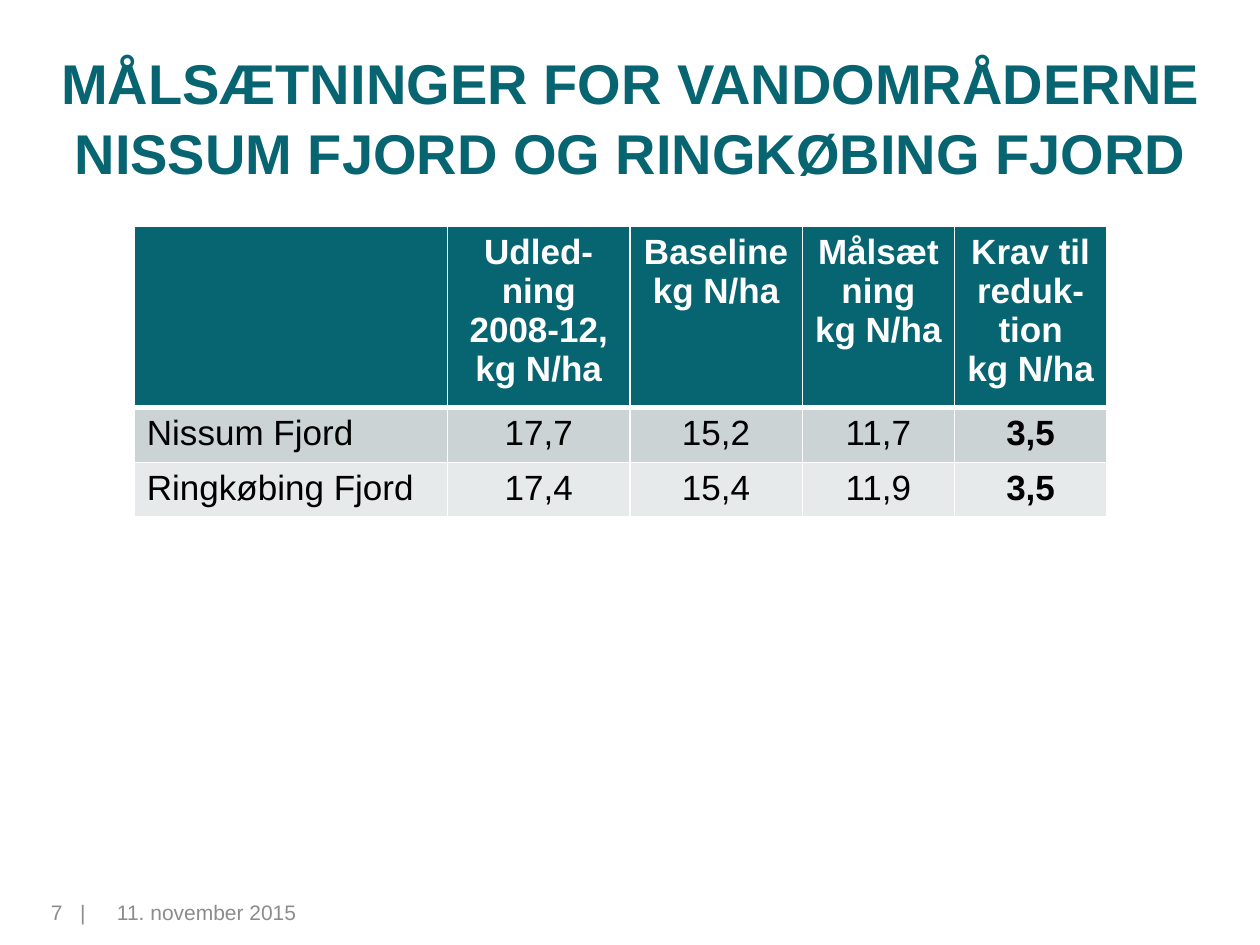
from dataclasses import dataclass

from pptx import Presentation
from pptx.dml.color import RGBColor
from pptx.enum.text import MSO_ANCHOR, PP_ALIGN
from pptx.oxml import parse_xml
from pptx.oxml.ns import nsdecls
from pptx.util import Pt

LEFT, CENTER = PP_ALIGN.LEFT, PP_ALIGN.CENTER
TOP, MIDDLE = MSO_ANCHOR.TOP, MSO_ANCHOR.MIDDLE


@dataclass(frozen=True)
class Theme:
    font: str = "Arial"
    teal: str = "076471"
    white: str = "FFFFFF"
    black: str = "000000"
    gray: str = "8C8C8C"
    bands: tuple = ("CCD3D5", "E7EAEB")
    title_size: int = 32
    table_size: int = 20
    footer_size: int = 12


THEME = Theme()
COLUMN_WIDTHS = (179, 104.25, 98.5, 87, 87)
ROW_HEIGHTS = (103.5, 29.5, 29.5)
ROWS = (
    ("", "Udled-ning\v2008-12, kg N/ha", "Baseline\vkg N/ha",
     "Målsætning\vkg N/ha", "Krav til reduk-tion\vkg N/ha"),
    ("Nissum Fjord", "17,7", "15,2", "11,7", "3,5"),
    ("Ringkøbing Fjord", "17,4", "15,4", "11,9", "3,5"),
)


class SlideBuilder:
    def __init__(self, slide, theme):
        self.slide = slide
        self.theme = theme

    def style(self, para, size, color, bold=False, align=LEFT):
        para.alignment = align
        para.font.name = self.theme.font
        para.font.size = Pt(size)
        para.font.bold = bold
        para.font.color.rgb = RGBColor.from_string(color)

    def text(self, text, left, top, width, height, size, color,
             bold=False, align=LEFT, anchor=TOP, line_spacing=None, tab=None):
        box = self.slide.shapes.add_textbox(Pt(left), Pt(top), Pt(width), Pt(height))
        frame = box.text_frame
        frame.word_wrap = True
        frame.vertical_anchor = anchor
        para = frame.paragraphs[0]
        para.text = text
        if line_spacing:
            para.line_spacing = line_spacing
        if tab:
            para._p.get_or_add_pPr().append(parse_xml(
                f'<a:tabLst {nsdecls("a")}><a:tab pos="{Pt(tab)}" algn="l"/></a:tabLst>'))
        self.style(para, size, color, bold, align)

    def borders(self, cell, bottom_width):
        """Draw white cell borders; they must precede the fill in the XML."""
        properties = cell._tc.get_or_add_tcPr()
        for side, width in (("L", 1), ("R", 1), ("T", 1), ("B", bottom_width)):
            properties.append(parse_xml(
                f'<a:ln{side} {nsdecls("a")} w="{Pt(width)}"><a:solidFill>'
                f'<a:srgbClr val="{self.theme.white}"/></a:solidFill></a:ln{side}>'))

    def table(self, rows, left, top, column_widths, row_heights):
        theme = self.theme
        table = self.slide.shapes.add_table(
            len(rows), len(column_widths), Pt(left), Pt(top),
            Pt(sum(column_widths)), Pt(sum(row_heights))).table
        for column, width in zip(table.columns, column_widths):
            column.width = Pt(width)
        last = len(column_widths) - 1
        for r, values in enumerate(rows):
            table.rows[r].height = Pt(row_heights[r])
            header = r == 0
            fill = theme.teal if header else theme.bands[(r - 1) % 2]
            color = theme.white if header else theme.black
            for c, value in enumerate(values):
                cell = table.cell(r, c)
                self.borders(cell, 3 if header else 1)
                cell.fill.solid()
                cell.fill.fore_color.rgb = RGBColor.from_string(fill)
                para = cell.text_frame.paragraphs[0]
                para.text = value
                self.style(para, theme.table_size, color, header or c == last,
                           CENTER if c else LEFT)


def main():
    deck = Presentation()
    deck.slide_width, deck.slide_height = Pt(720), Pt(540)
    page = SlideBuilder(deck.slides.add_slide(deck.slide_layouts[6]), THEME)
    page.text("MÅLSÆTNINGER FOR VANDOMRÅDERNE NISSUM FJORD OG RINGKØBING FJORD",
              14.4, 21, 692, 90, THEME.title_size, THEME.teal,
              bold=True, align=CENTER, anchor=MIDDLE, line_spacing=1.04)
    page.table(ROWS, 76.75, 129.5, COLUMN_WIDTHS, ROW_HEIGHTS)
    page.text("7\t|", 22, 510.5, 34, 29, THEME.footer_size, THEME.gray, tab=16.7)
    page.text("11. november 2015", 59.75, 510.5, 168, 29, THEME.footer_size, THEME.gray)
    deck.save("out.pptx")


if __name__ == "__main__":
    main()
